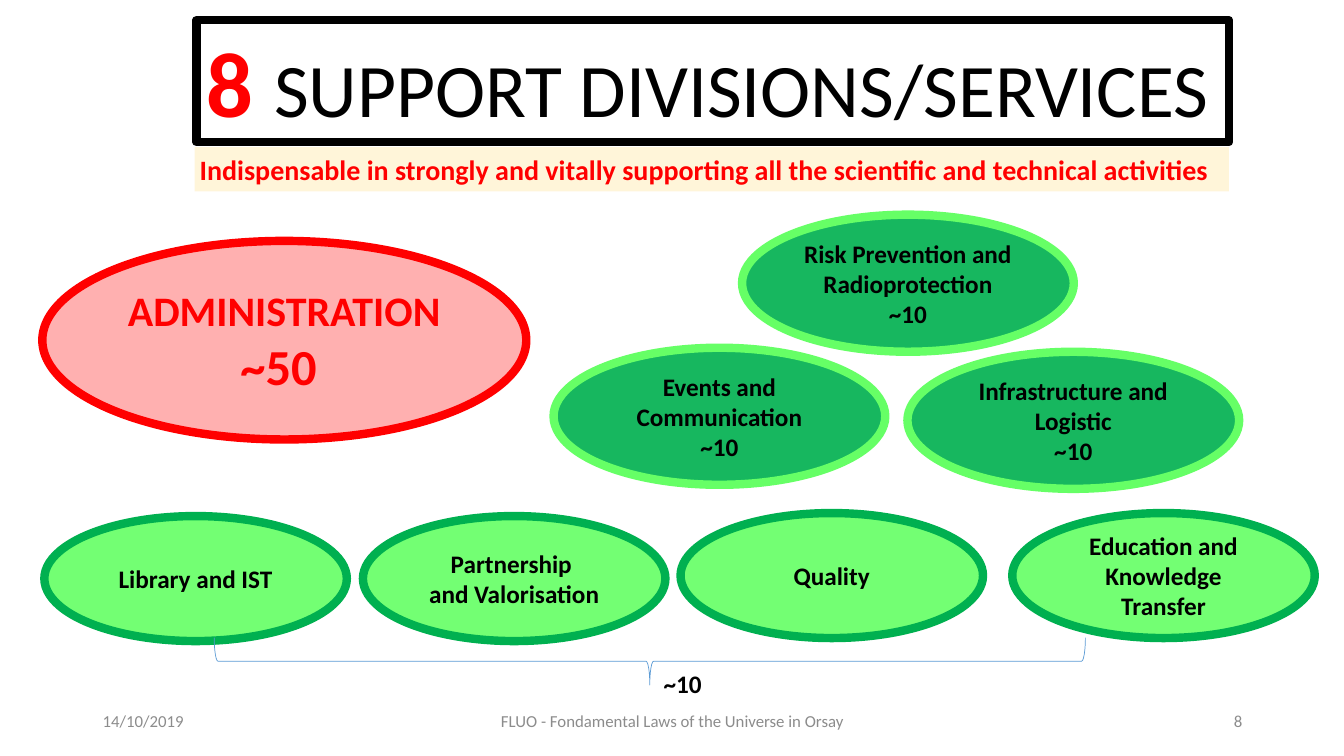
"""Build the slide on the eight support divisions and services."""
from lxml import etree
from pptx import Presentation, util as u
from pptx.dml import color
from pptx.enum import shapes, text
from pptx.oxml import ns

FONT = "Calibri"
BLACK, RED, GRAY = "000000", "FF0000", "8C8C8C"
GREEN, LIGHT_GREEN, AMBER, BLUE = "00B050", "66FF66", "FFC000", "5B9BD5"
LEFT, CENTER, RIGHT = text.PP_ALIGN.LEFT, text.PP_ALIGN.CENTER, text.PP_ALIGN.RIGHT
TOP, MIDDLE = text.MSO_ANCHOR.TOP, text.MSO_ANCHOR.MIDDLE

FOOTERS = [
    ("14/10/2019", 0.92, 3, LEFT),
    ("FLUO - Fondamental Laws of the Universe in Orsay", 4.42, 4.5, CENTER),
    ("8", 9.42, 3, RIGHT),
]
TITLE = [("8 ", 66, RED, True), ("SUPPORT DIVISIONS/SERVICES", 54, BLACK, False)]
SUBTITLE = ("Indispensable in strongly and vitally supporting "
            "all the scientific and technical activities")
LARGE_SERVICES = [
    (["Risk Prevention and Radioprotection", "~10"], 7.36, 2.13),
    (["Events and Communication", "~10"], 5.49, 3.45),
    (["Infrastructure and Logistic", "~10"], 9, 3.49),
]
SMALL_SERVICES = [
    (["Quality"], 6.75, 5.09),
    (["Library and IST"], 0.44, 5.12),
    (["Education and Knowledge Transfer"], 10.04, 5.09),
    (["Partnership ", "and Valorisation"], 3.6, 5.12),
]
LARGE_SIZE, SMALL_SIZE = (3.29, 1.36), (3, 1.24)


def rgb(value):
    return color.RGBColor.from_string(value)


def add_shape(kind, box, fill=None, opacity=100, line=None, width=6):
    shape = slide.shapes.add_shape(kind, *map(u.Inches, box))
    shape.shadow.inherit = False
    if fill:
        shape.fill.solid()
        shape.fill.fore_color.rgb = rgb(fill)
        tint = shape.fill._xPr.find(".//" + ns.qn("a:srgbClr"))
        etree.SubElement(tint, ns.qn("a:alpha"), val=str(opacity * 1000))
    else:
        shape.fill.background()
    if line:
        shape.line.color.rgb = rgb(line)
        shape.line.width = u.Pt(width)
    else:
        shape.line.fill.background()
    return shape


def style(font, size, tone, bold):
    font.name, font.size, font.bold = FONT, u.Pt(size), bold
    font.color.rgb = rgb(tone)


def write(shape, lines, tone=BLACK, bold=True, align=CENTER, anchor=MIDDLE, wrap=True):
    frame = shape.text_frame
    frame.word_wrap, frame.vertical_anchor = wrap, anchor
    for index, (line, size) in enumerate(lines):
        paragraph = frame.add_paragraph() if index else frame.paragraphs[0]
        paragraph.text, paragraph.alignment = line, align
        style(paragraph.font, size, tone, bold)


def add_text(box, line, size, **options):
    write(slide.shapes.add_textbox(*map(u.Inches, box)), [(line, size)], **options)


presentation = Presentation()
presentation.slide_width, presentation.slide_height = u.Inches(13.33), u.Inches(7.5)
slide = presentation.slides.add_slide(presentation.slide_layouts[6])
RECTANGLE, OVAL = shapes.MSO_SHAPE.RECTANGLE, shapes.MSO_SHAPE.OVAL

for label, left, width, align in FOOTERS:
    add_text((left, 6.95, width, 0.4), label, 12, tone=GRAY, bold=False, align=align)

title = add_shape(RECTANGLE, (1.95, 0.2, 10.24, 1.21), line=BLACK)
title.text_frame.word_wrap = False
title.text_frame.vertical_anchor = TOP
heading = title.text_frame.paragraphs[0]
heading.alignment = LEFT
for words, size, tone, bold in TITLE:
    run = heading.add_run()
    run.text = words
    style(run.font, size, tone, bold)

for services, size, fill, line in (
    (LARGE_SERVICES, LARGE_SIZE, GREEN, LIGHT_GREEN),
    (SMALL_SERVICES, SMALL_SIZE, LIGHT_GREEN, GREEN),
):
    for lines, left, top in services:
        oval = add_shape(OVAL, (left, top, *size), fill, 91, line)
        write(oval, [(line_text, 18) for line_text in lines])

administration = add_shape(OVAL, (0.42, 2.39, 4.8, 1.97), RED, 31, RED)
write(administration, [("ADMINISTRATION", 30), ("~50 ", 36)], RED)

subtitle = add_shape(RECTANGLE, (1.93, 1.46, 10.26, 0.44), AMBER, 15)
write(subtitle, [(SUBTITLE, 20)], RED, align=LEFT, anchor=TOP)
frame = subtitle.text_frame
frame.margin_left = frame.margin_right = frame.margin_top = frame.margin_bottom = u.Inches(0.05)

brace = add_shape(shapes.MSO_SHAPE.LEFT_BRACE, (6.21, 2.24, 0.47, 8.64), line=BLUE, width=0.5)
brace.rotation = 270
brace.adjustments[0], brace.adjustments[1] = 0.08, 0.5
add_text((6.48, 6.58, 0.58, 0.4), "~10", 18, anchor=TOP, wrap=False)

presentation.save("out.pptx")
